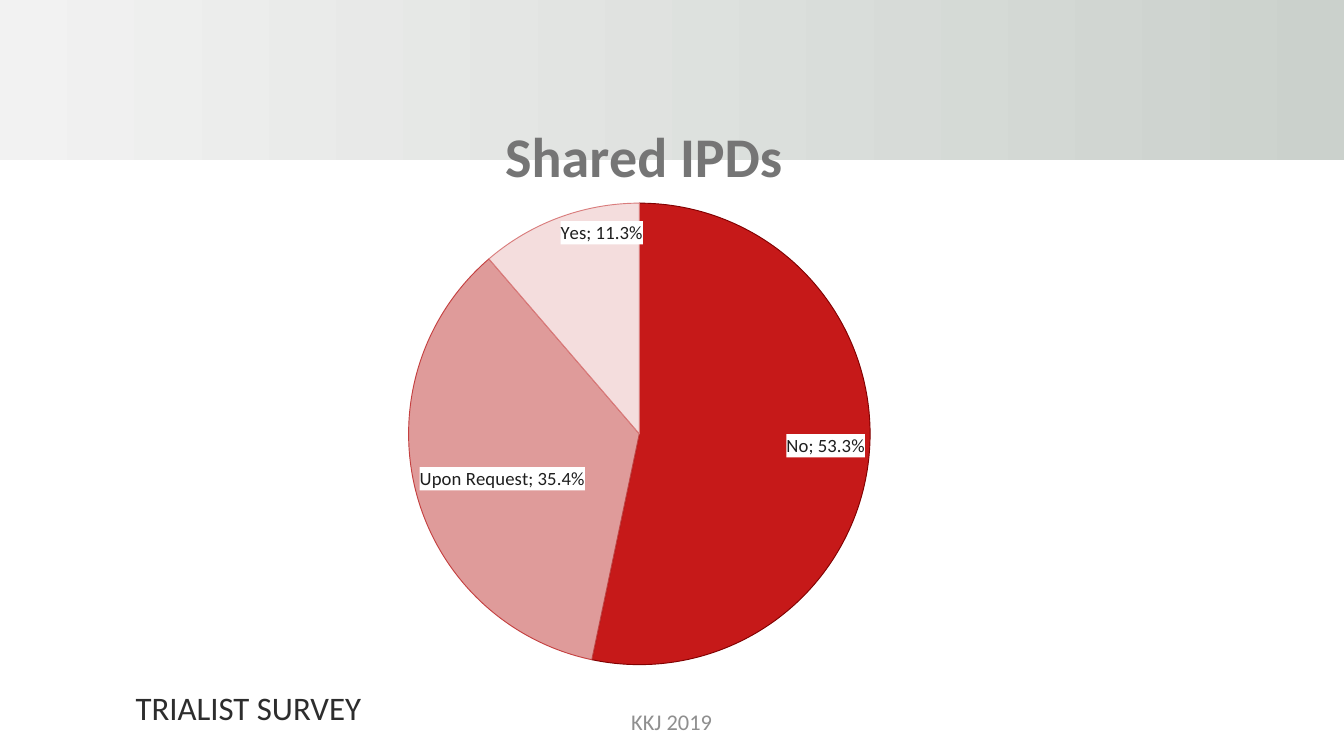
from lxml.etree import SubElement
from pptx import Presentation
from pptx.chart.data import CategoryChartData
from pptx.dml.color import RGBColor
from pptx.enum.chart import XL_CHART_TYPE, XL_LABEL_POSITION
from pptx.enum.shapes import MSO_SHAPE
from pptx.enum.text import MSO_ANCHOR, PP_ALIGN
from pptx.oxml import parse_xml
from pptx.oxml.ns import nsdecls, qn
from pptx.util import Inches, Pt

FONT = "Calibri"
COLORS = {
    "band_start": "F2F2F2", "band_end": "CBD1CC",
    "text": "2D2D2D", "footer": "8F8F8F", "heading": "757575",
    "label": "1E1E1E", "label_fill": "FFFFFF",
}
# Category: value, slice colour, outline colour
SLICES = {
    "No": (0.533, "C00000", "800000"),
    "Upon Request": (0.354, "DC9190", "C44040"),
    "Yes": (0.113, "F3DADA", "D97C7C"),
}


def rgb(name):
    return RGBColor.from_string(COLORS.get(name, name))


def set_layout(parent, index, x, y, w=None, h=None):
    """Place a chart part by fractions of the chart area."""
    for old in parent.findall(qn("c:layout")):
        parent.remove(old)
    layout = parse_xml(f"<c:layout {nsdecls('c')}><c:manualLayout/></c:layout>")
    manual = layout[0]
    if w:
        SubElement(manual, qn("c:layoutTarget")).set("val", "inner")
    for tag in ("xMode", "yMode"):
        SubElement(manual, qn(f"c:{tag}")).set("val", "edge")
    for tag, value in zip("xywh", (x, y, w, h)):
        if value is not None:
            SubElement(manual, qn(f"c:{tag}")).set("val", str(value))
    parent.insert(index, layout)


class Deck:
    def __init__(self, prs):
        self.s = prs.slides.add_slide(prs.slide_layouts[5])

    def style(self, font, size, color, bold=False):
        font.name, font.size, font.bold = FONT, Pt(size), bold
        font.color.rgb = rgb(color)

    def add_text(self, sp, text, size, color):
        tf = sp.text_frame
        tf.word_wrap = True
        tf.vertical_anchor = MSO_ANCHOR.MIDDLE
        tf.margin_left = tf.margin_right = Inches(0.2)
        tf.margin_top = tf.margin_bottom = Inches(0.1)
        p = tf.paragraphs[0]
        p.alignment = PP_ALIGN.CENTER
        r = p.add_run()
        r.text = text
        self.style(r.font, size, color)
        return r

    def band(self, *box):
        sp = self.s.shapes.add_shape(MSO_SHAPE.RECTANGLE, *map(Inches, box))
        sp.shadow.inherit = False
        sp.line.fill.background()
        sp.fill.gradient()
        sp.fill.gradient_angle = 0
        for stop, name in zip(sp.fill.gradient_stops, ("band_start", "band_end")):
            stop.color.rgb = rgb(name)

    def title(self, text, *box):
        sp = self.s.shapes.title
        sp.left, sp.top, sp.width, sp.height = map(Inches, box)
        r = self.add_text(sp, text, 44, "text")
        r.font._element.set("cap", "small")

    def footer(self, text, *box):
        sp = self.s.shapes.add_textbox(*map(Inches, box))
        self.add_text(sp, text, 24, "footer")

    def pie(self, heading, slices, *box):
        data = CategoryChartData(number_format="0.0%")
        data.categories = list(slices)
        data.add_series("Series 1", [value for value, _, _ in slices.values()])
        chart = self.s.shapes.add_chart(
            XL_CHART_TYPE.PIE, *map(Inches, box), data).chart
        chart.has_legend = False
        self.style(chart.font, 10, "text")

        # Heading
        p = chart.chart_title.text_frame.paragraphs[0]
        r = p.add_run()
        r.text = heading
        self.style(r.font, 60, "heading", bold=True)
        set_layout(chart.chart_title._element, 1, 0.35, 0.05)

        # Slices
        plot = chart.plots[0]
        plot.vary_by_categories = True
        set_layout(plot._element.getparent(), 0, 0.26, 0.21, 0.48, 0.77)
        for i, (_, fill, outline) in enumerate(slices.values()):
            fmt = plot.series[0].points[i].format
            fmt.fill.solid()
            fmt.fill.fore_color.rgb = rgb(fill)
            color = fmt.fill._xPr.find(f".//{qn('a:srgbClr')}")
            SubElement(color, qn("a:alpha")).set("val", "90000")
            fmt.line.color.rgb = rgb(outline)
            fmt.line.width = Pt(1)

        # Labels on a white ground
        labels = plot.series[0].data_labels
        labels.show_value = labels.show_category_name = True
        labels.show_percentage = labels.show_legend_key = False
        labels.number_format, labels.number_format_is_linked = "0.0%", False
        labels.position = XL_LABEL_POSITION.INSIDE_END
        self.style(labels.font, 20, "label")
        dl = labels._element
        dl.find(qn("c:numFmt")).addnext(parse_xml(
            f'<c:spPr {nsdecls("c", "a")}><a:solidFill>'
            f'<a:srgbClr val="{COLORS["label_fill"]}"/></a:solidFill></c:spPr>'))
        separator = parse_xml(f"<c:separator {nsdecls('c')}>; </c:separator>")
        dl.find(qn("c:showBubbleSize")).addnext(separator)


def main():
    prs = Presentation()
    prs.slide_width, prs.slide_height = Inches(20), Inches(11.25)
    deck = Deck(prs)
    deck.band(0, 0, 20, 2.38)
    deck.title("trialist survey", 0.1, 9.92, 7.19, 1.1)
    deck.footer("KKJ 2019", 6.83, 10.43, 6.33, 0.6)
    deck.pie("Shared IPDs", SLICES, 2.36, 1.15, 14.31, 8.92)
    prs.save("out.pptx")


if __name__ == "__main__":
    main()
